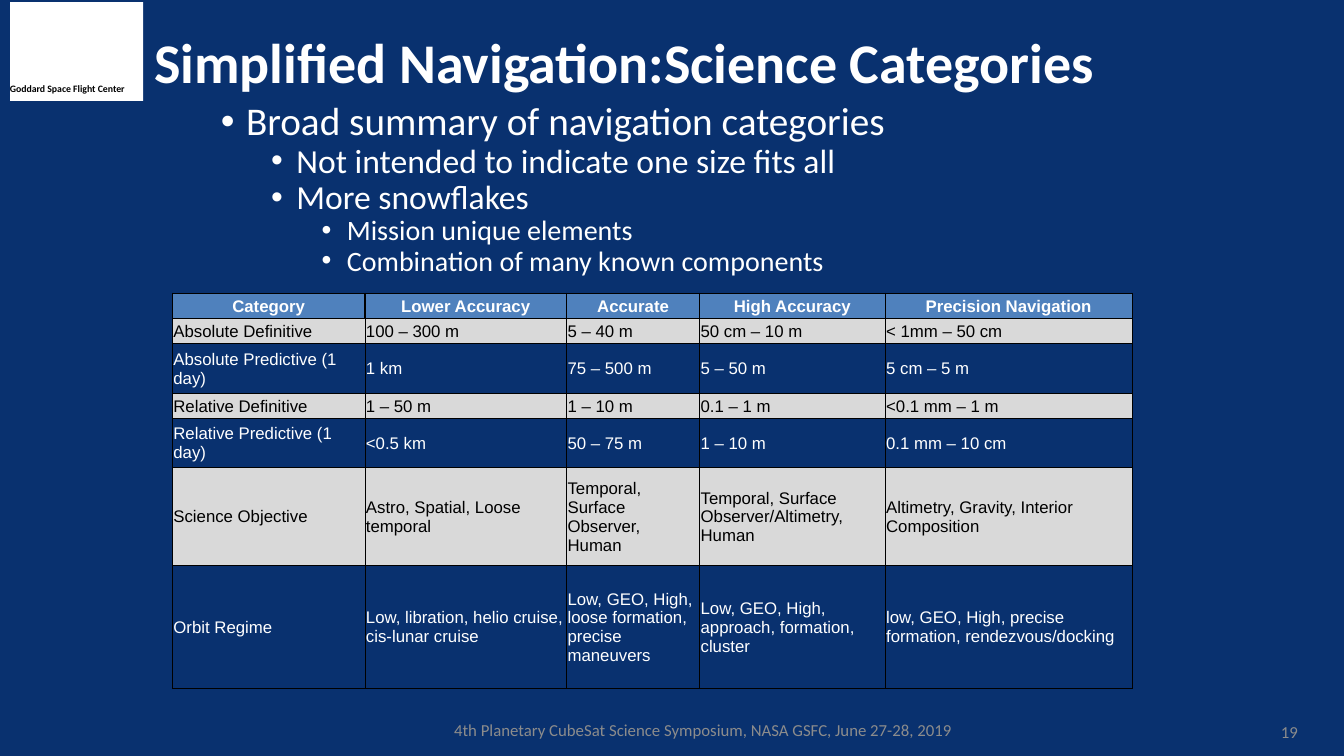
from dataclasses import dataclass

from lxml import etree
from pptx import Presentation
from pptx.dml.color import RGBColor
from pptx.enum.shapes import MSO_SHAPE
from pptx.enum.text import MSO_ANCHOR, MSO_AUTO_SIZE, PP_ALIGN
from pptx.oxml.ns import qn
from pptx.util import Inches, Pt

LEFT, CENTER, RIGHT = PP_ALIGN.LEFT, PP_ALIGN.CENTER, PP_ALIGN.RIGHT
TOP, MIDDLE = MSO_ANCHOR.TOP, MSO_ANCHOR.MIDDLE
NO_AUTOFIT = MSO_AUTO_SIZE.NONE
RECTANGLE = MSO_SHAPE.RECTANGLE

COLORS = {
    "background": "09316F",
    "white": "FFFFFF",
    "black": "000000",
    "header": "4F81BD",
    "band": "D9D9D9",
    "footer": "8C8C8C",
}


@dataclass
class Style:
    size: float
    color: str
    font: str = "Calibri"
    bold: bool = False


@dataclass
class Label:
    text: str
    box: tuple[float, float, float, float]
    style: Style
    align: PP_ALIGN = LEFT
    anchor: MSO_ANCHOR = MIDDLE
    wrap: bool = True


@dataclass
class Bullet:
    level: int
    text: str


LABELS = [
    Label("Goddard Space Flight Center", (0, 0.77, 1.36, 0.22),
          Style(7, "black", bold=True), anchor=TOP, wrap=False),
    Label("19", (11.62, 7.06, 1.35, 0.4), Style(12, "footer"), RIGHT),
    Label("4th Planetary CubeSat Science Symposium, NASA GSFC, June 27-28, 2019",
          (4.04, 7.04, 5.87, 0.4), Style(12, "footer"), CENTER),
]

BULLETS = [
    Bullet(0, "Broad summary of navigation categories"),
    Bullet(1, "Not intended to indicate one size fits all"),
    Bullet(1, "More snowflakes"),
    Bullet(2, "Mission unique elements"),
    Bullet(2, "Combination of many known components"),
]
BULLET_SIZES = [28, 24, 20]

COLUMN_WIDTHS = [1.91, 2, 1.32, 1.84, 2.45]
ROW_HEIGHTS = [0.25, 0.25, 0.49, 0.25, 0.49, 0.97, 1.22]
CATEGORY_ROWS = [
    ["Category", "Lower Accuracy", "Accurate", "High Accuracy", "Precision Navigation"],
    ["Absolute Definitive", "100 – 300 m", "5 – 40 m", "50 cm – 10 m", "< 1mm – 50 cm"],
    ["Absolute Predictive (1 day)", "1 km", "75 – 500 m", "5 – 50 m", "5 cm – 5 m"],
    ["Relative Definitive", "1 – 50 m", "1 – 10 m", "0.1 – 1 m", "<0.1 mm – 1 m"],
    ["Relative Predictive (1 day)", "<0.5 km", "50 – 75 m", "1 – 10 m", "0.1 mm – 10 cm"],
    ["Science Objective", "Astro, Spatial, Loose temporal",
     "Temporal, Surface Observer, Human",
     "Temporal, Surface Observer/Altimetry, Human",
     "Altimetry, Gravity, Interior Composition"],
    ["Orbit Regime", "Low, libration, helio cruise, cis-lunar cruise",
     "Low, GEO, High, loose formation, precise maneuvers",
     "Low, GEO, High, approach, formation, cluster",
     "low, GEO, High, precise formation, rendezvous/docking"],
]


def rgb(name: str) -> RGBColor:
    return RGBColor.from_string(COLORS[name])


def add_run(paragraph, text: str, style: Style) -> None:
    run = paragraph.add_run()
    run.text = text
    run.font.size = Pt(style.size)
    run.font.name = style.font
    run.font.bold = style.bold
    run.font.color.rgb = rgb(style.color)


def place(shape, left: float, top: float, width: float, height: float) -> None:
    shape.left, shape.top = Inches(left), Inches(top)
    shape.width, shape.height = Inches(width), Inches(height)


def add_label(slide, label: Label) -> None:
    frame = slide.shapes.add_textbox(*map(Inches, label.box)).text_frame
    frame.word_wrap = label.wrap
    frame.vertical_anchor = label.anchor
    paragraph = frame.paragraphs[0]
    paragraph.alignment = label.align
    add_run(paragraph, label.text, label.style)


def fill_title(title, text: str) -> None:
    place(title, 1.43, 0.3, 10.65, 0.56)
    frame = title.text_frame
    frame.auto_size = NO_AUTOFIT
    frame.vertical_anchor = TOP
    paragraph = frame.paragraphs[0]
    paragraph.alignment = LEFT
    paragraph.line_spacing = 0.9
    add_run(paragraph, text, Style(40, "white", bold=True))


def fill_body(body, bullets: list[Bullet]) -> None:
    place(body, 2.09, 0.96, 9.14, 2.08)
    frame = body.text_frame
    frame.auto_size = NO_AUTOFIT
    frame.vertical_anchor = TOP
    for index, bullet in enumerate(bullets):
        paragraph = frame.add_paragraph() if index else frame.paragraphs[0]
        paragraph.level = bullet.level
        paragraph.line_spacing = 0.9
        paragraph.space_before = Pt(0)
        properties = paragraph._p.get_or_add_pPr()
        properties.set("marL", str(Inches(0.25 + 0.5 * bullet.level)))
        properties.set("indent", str(Inches(-0.25)))
        etree.SubElement(properties, qn("a:buFont"), typeface="Arial")
        etree.SubElement(properties, qn("a:buChar"), char="•")
        add_run(paragraph, bullet.text, Style(BULLET_SIZES[bullet.level], "white"))


def set_borders(cell, widths: dict[str, float]) -> None:
    properties = cell._tc.get_or_add_tcPr()
    for position, (side, width) in enumerate(widths.items()):
        line = etree.Element(qn(f"a:ln{side}"), w=str(Pt(width)))
        solid = etree.SubElement(line, qn("a:solidFill"))
        etree.SubElement(solid, qn("a:srgbClr"), val=COLORS["black"])
        properties.insert(position, line)


def add_category_table(slide) -> None:
    last_row, last_column = len(ROW_HEIGHTS) - 1, len(COLUMN_WIDTHS) - 1
    table = slide.shapes.add_table(
        len(ROW_HEIGHTS), len(COLUMN_WIDTHS), Inches(1.71), Inches(2.91),
        Inches(sum(COLUMN_WIDTHS)), Inches(sum(ROW_HEIGHTS))).table
    table.horz_banding = False
    for column, width in zip(table.columns, COLUMN_WIDTHS):
        column.width = Inches(width)
    for r, (row, height) in enumerate(zip(table.rows, ROW_HEIGHTS)):
        row.height = Inches(height)
        header, banded = r == 0, r % 2 == 1
        style = Style(12, "black" if banded else "white", "Arial", header)
        for c, cell in enumerate(row.cells):
            cell.vertical_anchor = MIDDLE
            cell.margin_left = cell.margin_right = cell.margin_top = Inches(0.01)
            cell.margin_bottom = 0
            if header or banded:
                cell.fill.solid()
                cell.fill.fore_color.rgb = rgb("header" if header else "band")
            else:
                cell.fill.background()
            # Outer edges and header dividers are heavier
            set_borders(cell, {
                "L": 1 if header or c == 0 else 0.5,
                "R": 1 if header or c == last_column else 0.5,
                "T": 1 if header else 0.5,
                "B": 1 if r == last_row else 0.5,
            })
            paragraph = cell.text_frame.paragraphs[0]
            paragraph.alignment = CENTER if header else LEFT
            add_run(paragraph, CATEGORY_ROWS[r][c], style)


def main() -> None:
    presentation = Presentation()
    presentation.slide_width = Inches(13.33)
    presentation.slide_height = Inches(7.5)
    slide = presentation.slides.add_slide(presentation.slide_layouts[1])
    slide.background.fill.solid()
    slide.background.fill.fore_color.rgb = rgb("background")

    # Center badge
    badge = slide.shapes.add_shape(RECTANGLE, *map(Inches, (0.1, 0.02, 1.32, 0.98)))
    badge.shadow.inherit = False
    badge.fill.solid()
    badge.fill.fore_color.rgb = rgb("white")
    badge.line.fill.background()

    # Title, list, table, badge name and footer
    fill_title(slide.shapes.title, "Simplified Navigation:Science Categories")
    fill_body(slide.placeholders[1], BULLETS)
    add_category_table(slide)
    for label in LABELS:
        add_label(slide, label)

    presentation.save("out.pptx")


if __name__ == "__main__":
    main()
